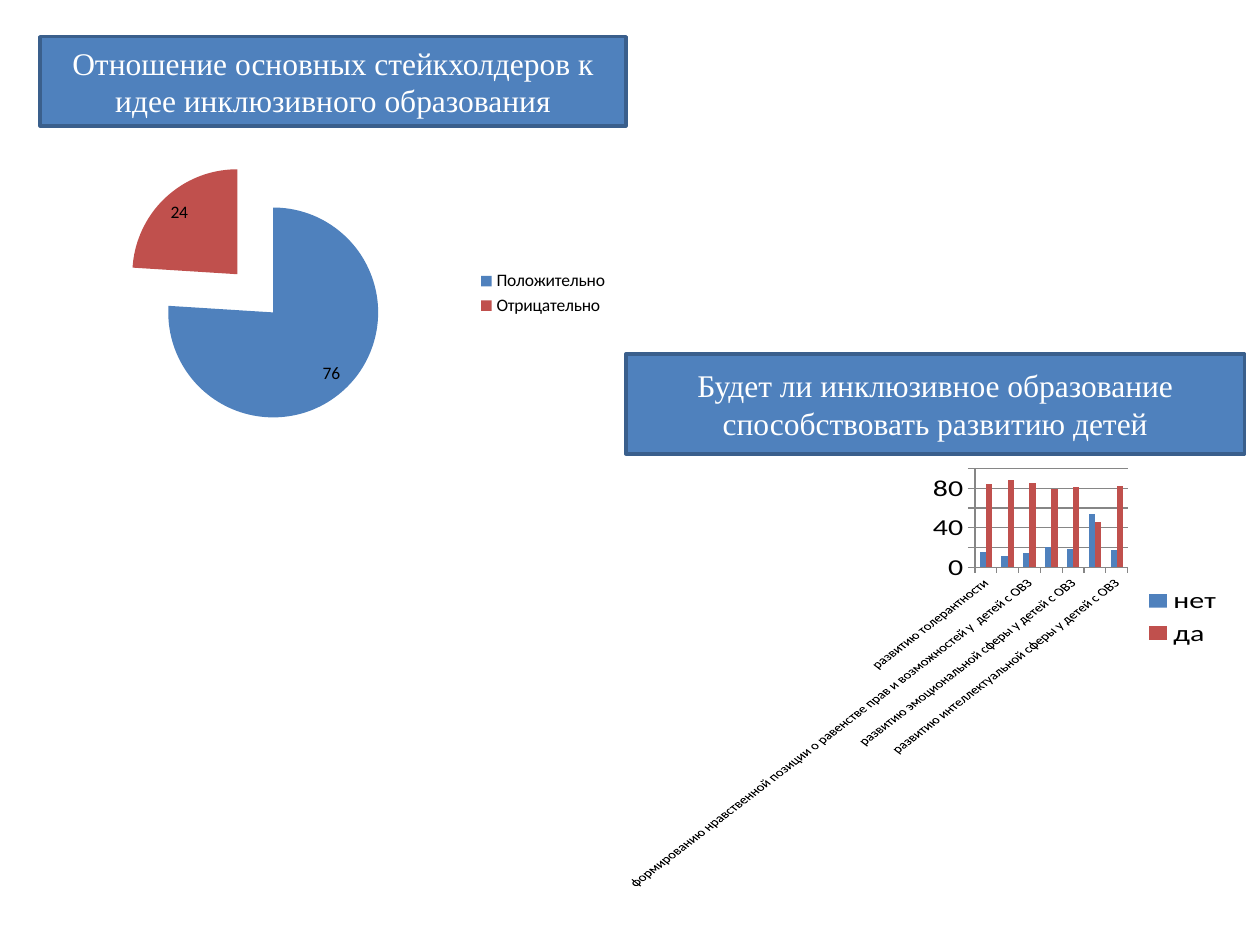
"""Build a slide with a pie and a column chart on attitudes to inclusive education."""
from dataclasses import dataclass

from pptx import Presentation
from pptx.chart.data import CategoryChartData as Data
from pptx.dml.color import RGBColor as RGB
from pptx.enum.chart import XL_CHART_TYPE as Kind
from pptx.enum.chart import XL_LABEL_POSITION as Spot
from pptx.enum.chart import XL_LEGEND_POSITION as Side
from pptx.enum.chart import XL_TICK_LABEL_POSITION as Place
from pptx.enum.chart import XL_TICK_MARK as Tick
from pptx.enum.shapes import MSO_SHAPE as Form
from pptx.enum.text import MSO_ANCHOR as Anchor
from pptx.enum.text import PP_ALIGN as Align
from pptx.util import Cm, Pt


@dataclass(frozen=True)
class Theme:
    blue: RGB = RGB.from_string("4F81BD")
    red: RGB = RGB.from_string("C0504D")
    edge: RGB = RGB.from_string("3A5F8C")
    grid: RGB = RGB.from_string("868686")
    white: RGB = RGB.from_string("FFFFFF")
    black: RGB = RGB.from_string("000000")
    serif: str = "Times New Roman"
    sans: str = "Calibri"
    large: Pt = Pt(18)
    small: Pt = Pt(10)
    tiny: Pt = Pt(9)


theme = Theme()
hues = (theme.blue, theme.red)
deck = Presentation()
deck.slide_width, deck.slide_height = Cm(25.4), Cm(19.05)
slide = deck.slides.add_slide(deck.slide_layouts[6])


def add_chart(kind, box, cats, rows, size):
    data = Data()
    data.categories = cats
    for name, vals in rows:
        data.add_series(name, vals)
    chart = slide.shapes.add_chart(kind, *map(Cm, box), data).chart
    chart.has_title = False
    chart.font.name = theme.sans
    chart.font.size = size
    chart.font.color.rgb = theme.black
    chart.has_legend = True
    chart.legend.position = Side.RIGHT
    chart.legend.include_in_layout = False
    return chart


pie = add_chart(
    Kind.PIE_EXPLODED, (0.71, 2.92, 11.81, 5.99),
    ("Положительно", "Отрицательно"), [("Отношение", (76, 24))], theme.small)
plot = pie.plots[0]
for i, hue in enumerate(hues):
    fill = plot.series[0].points[i].format.fill
    fill.solid()
    fill.fore_color.rgb = hue
for node in pie.element.xpath(".//c:ser/c:explosion"):
    node.set("val", "25")
plot.has_data_labels = True
plot.data_labels.show_value = True
plot.data_labels.show_percentage = False
plot.data_labels.position = Spot.INSIDE_END

rights = "формированию нравственной позиции о равенстве прав и возможностей у "
mood = "развитию эмоциональной сферы у"
mind = "развитию интеллектуальной сферы у"
usual = "типично развивающихся детей"
special = "детей с ОВЗ"
cats = (
    "развитию толерантности",
    f"{rights}{usual}", f"{rights} {special}",
    f"{mood} {usual}", f"{mood} {special}",
    f"{mind} {usual}", f"{mind} {special}",
)
rows = [
    ("нет", (16, 12, 15, 21, 19, 54, 18)),
    ("да", (84, 88, 85, 79, 81, 46, 82)),
]
bars = add_chart(
    Kind.COLUMN_CLUSTERED, (12.62, 9.32, 12.29, 8.61), cats, rows, theme.large)
plot = bars.plots[0]
plot.gap_width = 150
plot.vary_by_categories = False
for row, hue in zip(plot.series, hues):
    row.format.fill.solid()
    row.format.fill.fore_color.rgb = hue
for axis in (bars.category_axis, bars.value_axis):
    axis.major_tick_mark = Tick.OUTSIDE
    axis.minor_tick_mark = Tick.NONE
    axis.format.line.color.rgb = theme.grid
bars.category_axis.tick_label_position = Place.LOW
bars.category_axis.tick_labels.font.size = theme.tiny
for node in bars.element.xpath(".//c:catAx/c:txPr/a:bodyPr"):
    node.set("rot", "-2700000")
scale = bars.value_axis
scale.minimum_scale, scale.maximum_scale, scale.major_unit = 0, 100, 20
scale.has_major_gridlines = True
scale.major_gridlines.format.line.color.rgb = theme.grid

heads = (
    ("Отношение основных стейкхолдеров к идее инклюзивного образования",
     (0.81, 0.74, 11.81, 1.8)),
    ("Будет ли инклюзивное образование способствовать развитию детей",
     (12.62, 7.14, 12.47, 2.01)),
)
for text, box in heads:
    head = slide.shapes.add_shape(Form.RECTANGLE, *map(Cm, box))
    head.shadow.inherit = False
    head.fill.solid()
    head.fill.fore_color.rgb = theme.blue
    head.line.color.rgb = theme.edge
    head.line.width = Pt(2)
    frame = head.text_frame
    frame.word_wrap = True
    frame.vertical_anchor = Anchor.MIDDLE
    frame.text = text
    para = frame.paragraphs[0]
    para.alignment = Align.CENTER
    para.font.name = theme.serif
    para.font.size = theme.large
    para.font.color.rgb = theme.white

deck.save("out.pptx")
